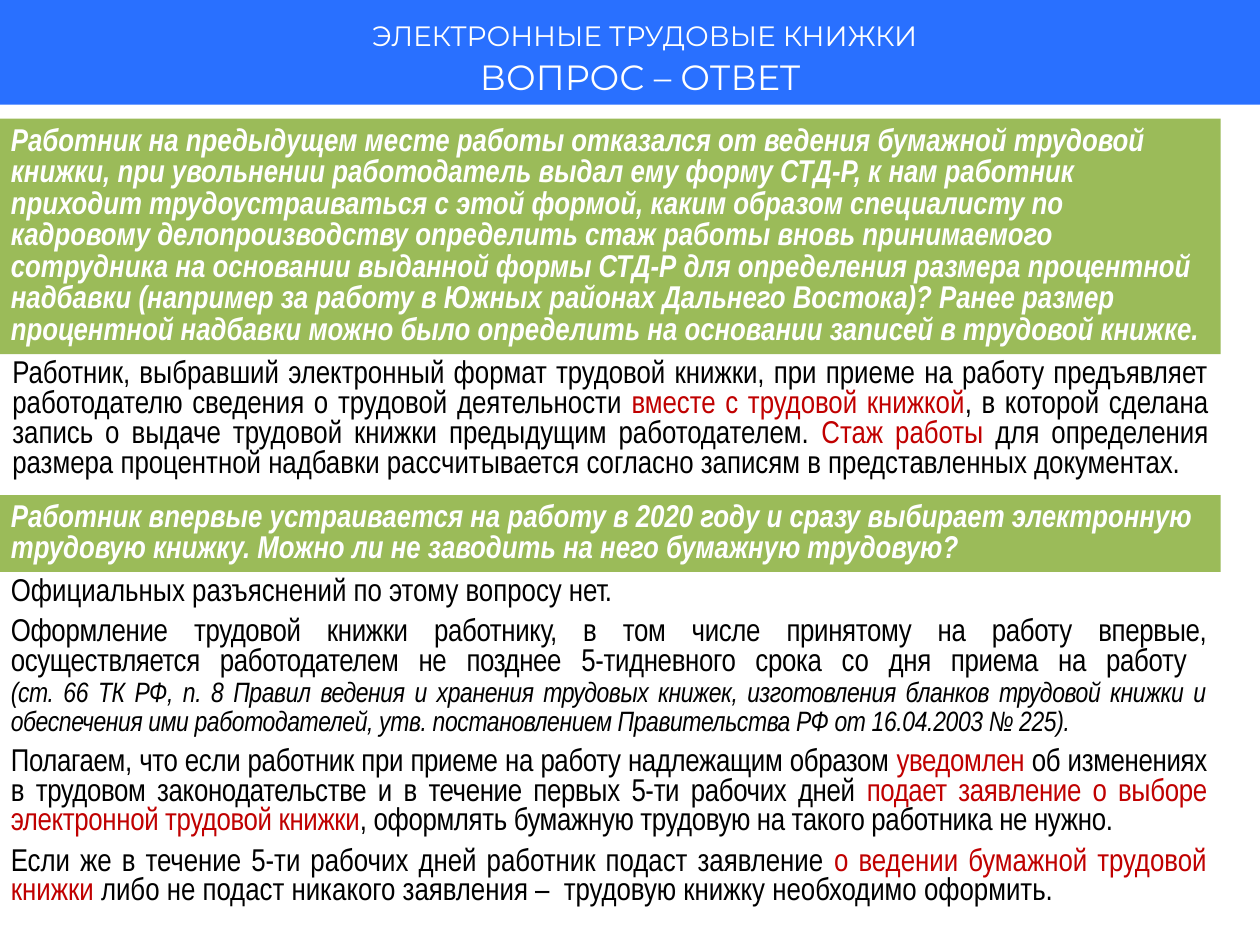
from pptx import Presentation
from pptx import util as u
from pptx.dml.color import RGBColor
from pptx.enum import shapes, text

COLORS = {"header": "2970FF", "question": "9BBB59", "white": "FFFFFF",
          "black": "000000", "accent": "C00000"}

# Font formats; "color" and "spc" (hundredths of a point) are handled apart
TITLE = {"name": "Montserrat", "color": "white"}
QUESTION = {"name": "Arial Narrow", "size": u.Pt(18), "bold": True, "italic": True, "color": "white"}
PLAIN = {"name": "Arial Narrow", "size": u.Pt(18), "color": "black"}
RED = {**PLAIN, "color": "accent"}
TIGHT = {**PLAIN, "spc": -20}
TIGHT_RED = {**RED, "spc": -20}
LAW = {**TIGHT, "size": u.Pt(16), "italic": True}

TITLE_PAR = {"alignment": text.PP_ALIGN.CENTER, "line_spacing": u.Pt(26)}
QUESTION_PAR = {"alignment": text.PP_ALIGN.LEFT, "line_spacing": u.Pt(18)}
ANSWER_PAR = {"alignment": text.PP_ALIGN.JUSTIFY, "line_spacing": u.Pt(17), "space_after": u.Pt(6)}

HEADING = [
    [("ЭЛЕКТРОННЫЕ ТРУДОВЫЕ КНИЖКИ", {**TITLE, "size": u.Pt(16)})],
    [("ВОПРОС – ОТВЕТ ", {**TITLE, "size": u.Pt(20)})],
]

# Tops, heights and answer lefts in centimetres; an answer starts where its question ends
FAQ = [
    {
        "top": 2.39, "height": 4.75, "answer_left": 0, "answer_height": 2.67,
        "question": "Работник на предыдущем месте работы отказался от ведения бумажной трудовой "
                    "книжки, при увольнении работодатель выдал ему форму СТД-Р, к нам работник "
                    "приходит трудоустраиваться с этой формой, каким образом специалисту по "
                    "кадровому делопроизводству определить стаж работы вновь принимаемого "
                    "сотрудника на основании выданной формы СТД-Р для определения размера "
                    "процентной надбавки (например за работу в Южных районах Дальнего Востока)? "
                    "Ранее размер процентной надбавки можно было определить на основании записей "
                    "в трудовой книжке.",
        "answer": [
            [("Работник, выбравший электронный формат трудовой книжки, при приеме на работу "
              "предъявляет работодателю сведения о трудовой деятельности ", PLAIN),
             ("вместе с трудовой книжкой", RED),
             (", в которой сделана запись о выдаче трудовой книжки предыдущим работодателем. ", PLAIN),
             ("Стаж работы ", RED),
             ("для определения размера процентной надбавки рассчитывается согласно записям "
              "в представленных документах. ", PLAIN)],
        ],
    },
    {
        "top": 9.98, "height": 1.55, "answer_left": -0.03, "answer_height": 6.96,
        "question": "Работник впервые устраивается на работу в 2020 году и сразу выбирает "
                    "электронную трудовую книжку. Можно ли не заводить на него бумажную трудовую?",
        "answer": [
            [("Официальных разъяснений по этому вопросу нет. ", PLAIN)],
            [("Оформление трудовой книжки работнику, в том числе принятому на работу впервые, "
              "осуществляется работодателем не позднее 5-тидневного срока со дня приема "
              "на работу \n", TIGHT),
             ("(ст. 66 ТК РФ, п. 8 Правил ведения и хранения трудовых книжек, изготовления "
              "бланков трудовой книжки и обеспечения ими работодателей, утв. постановлением "
              "Правительства РФ от 16.04.2003 № 225).", LAW)],
            [("Полагаем, что если работник при приеме на работу надлежащим образом ", TIGHT),
             ("уведомлен", TIGHT_RED),
             (" об изменениях в трудовом законодательстве и в течение первых 5-ти рабочих дней ", TIGHT),
             ("подает заявление о выборе электронной трудовой книжки", TIGHT_RED),
             (", оформлять бумажную трудовую на такого работника не нужно. ", TIGHT)],
            [("Если же в течение 5-ти рабочих дней работник подаст заявление ", PLAIN),
             ("о ведении бумажной трудовой книжки", RED),
             (" либо не подаст никакого заявления –  трудовую книжку необходимо оформить.", PLAIN)],
        ],
    },
]

LEFT, BAND_WIDTH, ANSWER_WIDTH = -0.03, 24.64, 24.61
HEADER_WIDTH, HEADER_HEIGHT = 25.43, 2.11


def add_band(s, top, width, height, color):
    sp = s.shapes.add_shape(shapes.MSO_SHAPE.RECTANGLE, u.Cm(LEFT), u.Cm(top), u.Cm(width), u.Cm(height))
    sp.shadow.inherit = False
    sp.fill.solid()
    sp.fill.fore_color.rgb = RGBColor.from_string(COLORS[color])
    sp.line.fill.background()
    return sp


def add_run(p, words, style):
    """Add a styled run; a closing newline becomes a line break."""
    r = p.add_run()
    r.text = words.rstrip("\n")
    for key, value in style.items():
        if key == "color":
            r.font.color.rgb = RGBColor.from_string(COLORS[value])
        elif key == "spc":
            r._r.get_or_add_rPr().set("spc", str(value))
        else:
            setattr(r.font, key, value)
    if words.endswith("\n"):
        p.add_line_break()


def write(sp, paragraphs, par_format):
    tf = sp.text_frame
    tf.word_wrap = True
    tf.auto_size = text.MSO_AUTO_SIZE.SHAPE_TO_FIT_TEXT
    for i, runs in enumerate(paragraphs):
        p = tf.add_paragraph() if i else tf.paragraphs[0]
        for key, value in par_format.items():
            setattr(p, key, value)
        for words, style in runs:
            add_run(p, words, style)


def main():
    prs = Presentation()
    prs.slide_width, prs.slide_height = u.Cm(25.4), u.Cm(19.05)
    s = prs.slides.add_slide(prs.slide_layouts[6])

    add_band(s, 0, HEADER_WIDTH, HEADER_HEIGHT, "header")
    heading = s.shapes.add_textbox(u.Cm(0.3), u.Cm(0), u.Cm(25.4), u.Cm(HEADER_HEIGHT))
    write(heading, HEADING, TITLE_PAR)

    for item in FAQ:
        band = add_band(s, item["top"], BAND_WIDTH, item["height"], "question")
        write(band, [[(item["question"], QUESTION)]], QUESTION_PAR)
        answer = s.shapes.add_textbox(u.Cm(item["answer_left"]), u.Cm(item["top"] + item["height"]),
                                      u.Cm(ANSWER_WIDTH), u.Cm(item["answer_height"]))
        write(answer, item["answer"], ANSWER_PAR)

    prs.save("out.pptx")


if __name__ == "__main__":
    main()
